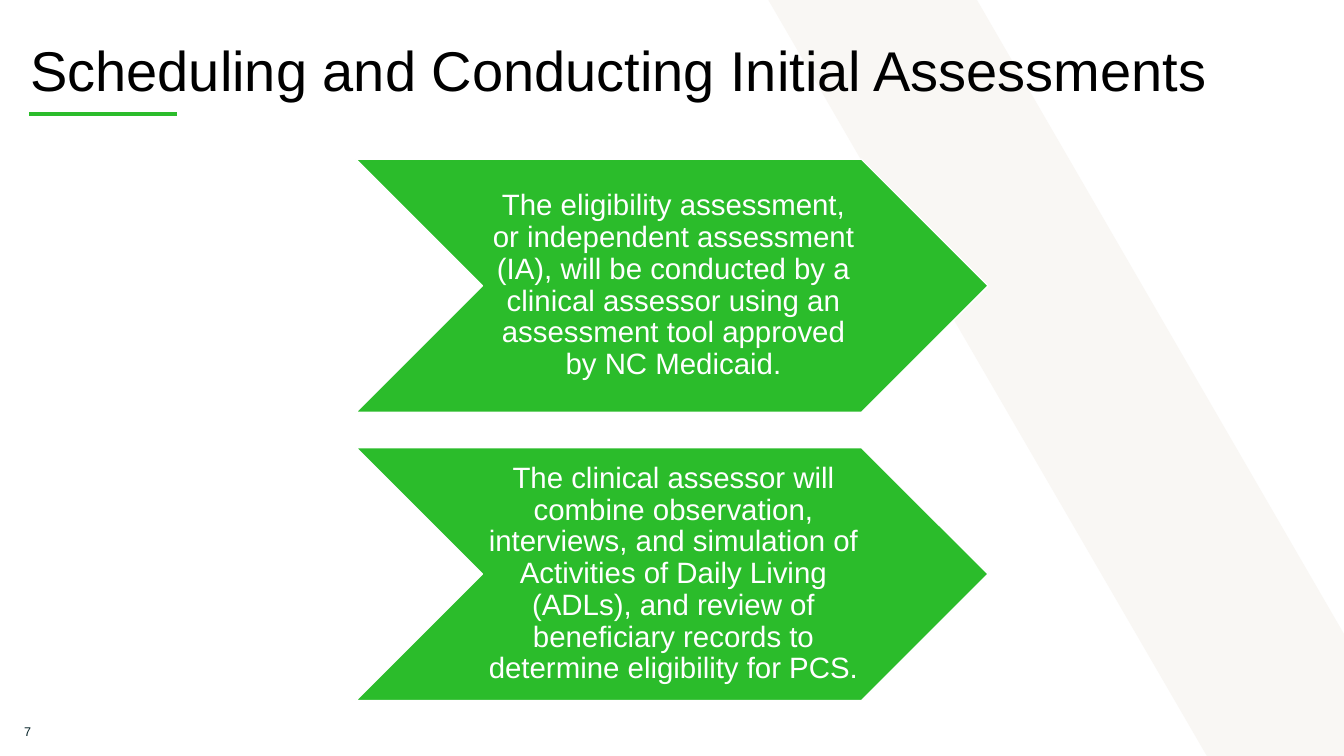
from pptx import Presentation
from pptx.dml.color import RGBColor
from pptx.enum.shapes import MSO_CONNECTOR, MSO_SHAPE
from pptx.enum.text import MSO_ANCHOR, PP_ALIGN
from pptx.oxml.ns import qn
from pptx.util import Inches, Pt
from lxml import etree

GREEN, WHITE, BLACK = "2BBC2B", "FFFFFF", "000000"
DARK, CREAM = "042126", "F9F7F4"

STEPS = [
    "The eligibility assessment, or independent assessment (IA), will be "
    "conducted by a clinical assessor using an assessment tool approved by "
    "NC Medicaid.",
    "The clinical assessor will combine observation, interviews, and "
    "simulation of Activities of Daily Living (ADLs), and review of "
    "beneficiary records to determine eligibility for PCS.",
]


def rgb(color):
    return RGBColor.from_string(color)


def write(shape, text, size, color, align, insets, spacing=1.0):
    frame = shape.text_frame
    left, top, right, bottom = map(Inches, insets)
    form = {"word_wrap": True, "vertical_anchor": MSO_ANCHOR.MIDDLE,
            "margin_left": left, "margin_top": top,
            "margin_right": right, "margin_bottom": bottom}
    for name, value in form.items():
        setattr(frame, name, value)
    para = frame.paragraphs[0]
    para.alignment, para.line_spacing = align, spacing
    run = para.add_run()
    run.text = text
    for name, value in {"name": "Arial", "size": Pt(size)}.items():
        setattr(run.font, name, value)
    run.font.color.rgb = rgb(color)


def add_text(slide, box, *style):
    write(slide.shapes.add_textbox(*map(Inches, box)), *style)


def add_band(slide, points, color):
    start, *rest = [(Inches(x), Inches(y)) for x, y in points]
    maker = slide.shapes.build_freeform(*start)
    maker.add_line_segments(rest, close=True)
    band = maker.convert_to_shape()
    band.shadow.inherit = False
    band.fill.solid()
    band.fill.fore_color.rgb = rgb(color)
    band.line.fill.background()


def add_rule(slide, left, right, y, color, width):
    rule = slide.shapes.add_connector(
        MSO_CONNECTOR.STRAIGHT, *map(Inches, (left, y, right, y)))
    rule.line.color.rgb = rgb(color)
    rule.line.width = Pt(width)
    etree.SubElement(rule._element.spPr, qn("a:effectLst"))


def add_step(slide, box, text):
    step = slide.shapes.add_shape(MSO_SHAPE.CHEVRON, *map(Inches, box))
    step.shadow.inherit = False
    step.fill.solid()
    step.fill.fore_color.rgb = rgb(GREEN)
    step.line.color.rgb = rgb(WHITE)
    step.line.width = Pt(1)
    write(step, text, 21, WHITE, PP_ALIGN.CENTER, (0.03, 0.01, 0, 0.01), 0.9)


def main():
    deck = Presentation()
    deck.slide_width, deck.slide_height = Inches(13.33), Inches(7.5)
    slide = deck.slides.add_slide(deck.slide_layouts[6])

    # Backdrop and page number
    add_band(slide, [(7.62, 0), (9.69, 0), (13.33, 6.29), (13.33, 7.5),
                     (11.97, 7.5)], CREAM)
    add_text(slide, (0.01, 7.06, 0.53, 0.4), "7", 9, DARK,
             PP_ALIGN.CENTER, (0.1, 0.05, 0.1, 0.05))

    # Title with its underline
    add_rule(slide, 0.29, 1.76, 1.13, GREEN, 3)
    add_text(slide, (0.3, 0.44, 12.48, 0.57),
             "Scheduling and Conducting Initial Assessments", 40, BLACK,
             PP_ALIGN.LEFT, (0, 0, 0, 0), 0.9)

    # Assessment steps
    for row, text in enumerate(STEPS):
        add_step(slide, (3.53, 1.58 + row * 2.86, 6.27, 2.51), text)

    deck.save("out.pptx")


if __name__ == "__main__":
    main()
